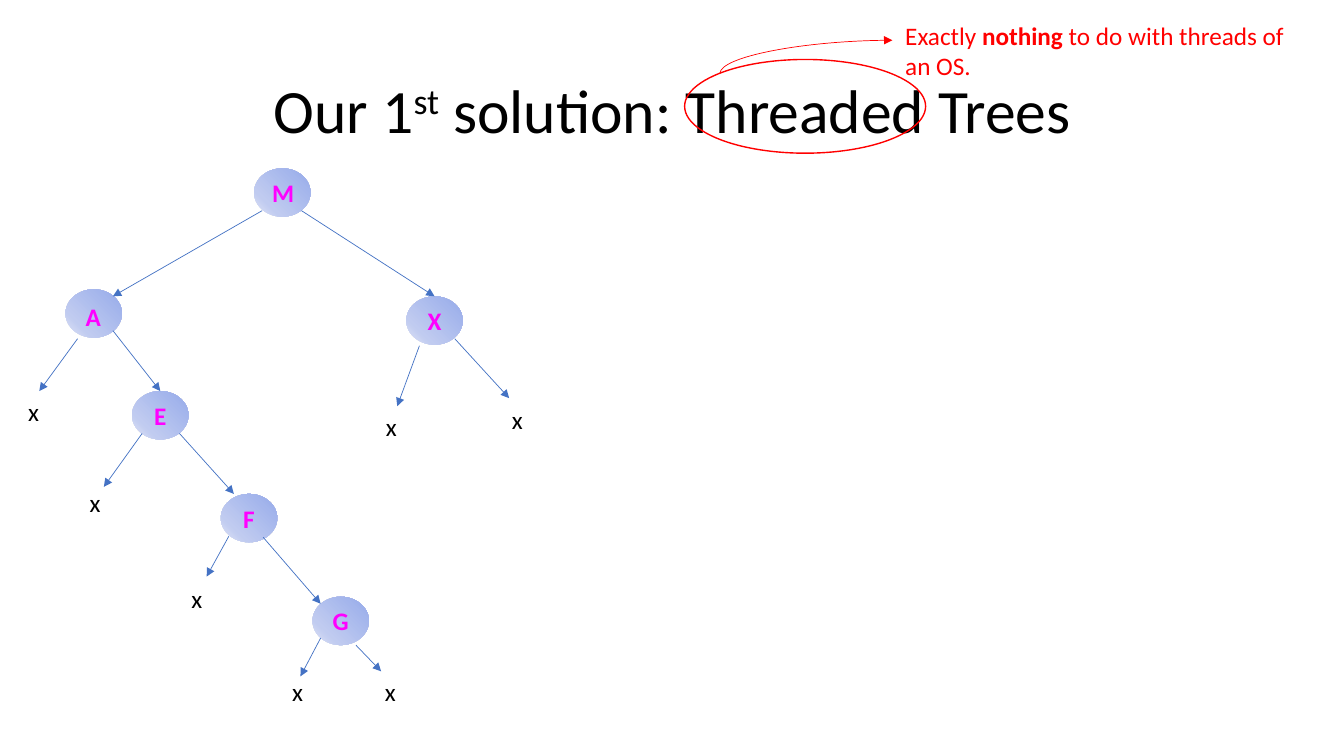
from lxml import etree
from pptx import Presentation
from pptx import util as u
from pptx.dml.color import RGBColor
from pptx.enum import shapes, text
from pptx.oxml import parse_xml
from pptx.oxml.ns import qn

COLORS = {"ink": "000000", "key": "FF00FF", "edge": "4472C4", "note": "FF0000"}
NODE_STOPS = [(0, "96ABEA"), (74, "C0CBF0"), (100, "E0E5F7")]
NODE_W, NODE_H = 0.56, 0.48

# Top left corners, relative to the tree's box
NODES = {"M": (2.34, 0), "A": (0.47, 1.2), "X": (3.85, 1.27),
         "E": (1.13, 2.21), "F": (2.01, 3.23), "G": (2.92, 4.25)}
NULLS = {"X left": (3.55, 2.36), "X right": (4.8, 2.29), "A left": (0, 2.21),
         "E left": (0.61, 3.12), "F left": (1.62, 4.07),
         "G left": (2.62, 4.99), "G right": (3.54, 4.99)}
# Parent, offset of the start in it, child, offset of the tip in it
EDGES = [
    ("M", (0.08, 0.42), "A", (0.47, 0.07)),
    ("M", (0.47, 0.42), "X", (0.28, 0)),
    ("A", (0.47, 0.41), "E", (0.28, 0)),
    ("E", (0.47, 0.42), "F", (0.13, 0)),
    ("F", (0.42, 0.43), "G", (0.08, 0.07)),
    ("X", (0.13, 0.49), "X left", (0.21, 0)),
    ("X", (0.48, 0.42), "X right", (0.07, -0.01)),
    ("A", (0.12, 0.49), "A left", (0.21, 0)),
    ("E", (0.1, 0.42), "E left", (0.24, 0.04)),
    ("F", (0.08, 0.42), "F left", (0.25, -0.02)),
    ("G", (0.08, 0.41), "G left", (0.18, 0.05)),
    ("G", (0.43, 0.48), "G right", (0.06, 0)),
]


def inches(*lengths):
    return [u.Inches(v) for v in lengths]


def add_run(p, words, color, size=18, **fmt):
    r = p.add_run()
    r.text = words
    for name, value in {"size": u.Pt(size), "name": "Calibri", **fmt}.items():
        setattr(r.font, name, value)
    r.font.color.rgb = RGBColor.from_string(COLORS[color])
    return r


def add_text(s, box, runs, wrap=True, align=text.PP_ALIGN.LEFT):
    tf = s.shapes.add_textbox(*inches(*box)).text_frame
    tf.word_wrap = wrap
    tf.auto_size = text.MSO_AUTO_SIZE.SHAPE_TO_FIT_TEXT
    p = tf.paragraphs[0]
    p.alignment = align
    for words, color, fmt in runs:
        add_run(p, words, color, **fmt)


def add_ellipse(s, box):
    sp = s.shapes.add_shape(shapes.MSO_SHAPE.OVAL, *inches(*box))
    sp.shadow.inherit = False
    return sp


def add_arrow(s, kind, start, end, color):
    line = s.shapes.add_connector(kind, *inches(*start, *end))
    line.line.color.rgb = RGBColor.from_string(COLORS[color])
    line.line.width = u.Pt(0.5)
    etree.SubElement(line.line._get_or_add_ln(), qn("a:tailEnd"), type="triangle")
    etree.SubElement(line._element.spPr, qn("a:effectLst"))
    return line


def add_node(s, key, x, y):
    sp = add_ellipse(s, (x, y, NODE_W, NODE_H))
    sp.line.fill.background()
    # Circular gradient that starts at the top right
    stops = "".join(f'<a:gs pos="{pos * 1000}"><a:srgbClr val="{c}"/></a:gs>'
                    for pos, c in NODE_STOPS)
    sp._element.spPr.find(qn("a:prstGeom")).addnext(parse_xml(
        '<a:gradFill xmlns:a="http://schemas.openxmlformats.org/drawingml/2006/main">'
        f'<a:gsLst>{stops}</a:gsLst><a:path path="circle">'
        '<a:fillToRect l="100000" b="100000"/></a:path></a:gradFill>'))
    if key == "A":  # this key sits in its own box, slightly lower
        add_text(s, (x + 0.1, y + 0.07, 0.35, 0.4), [(key, "key", {"bold": True})],
                 wrap=False, align=text.PP_ALIGN.CENTER)
        return
    tf = sp.text_frame
    tf.vertical_anchor = text.MSO_ANCHOR.MIDDLE
    tf.paragraphs[0].alignment = text.PP_ALIGN.CENTER
    add_run(tf.paragraphs[0], key, "key", bold=True)


def add_title(s, x, y, w, h):
    title = s.shapes.title
    title.left, title.top, title.width, title.height = inches(x, y, w, h)
    tf = title.text_frame
    tf.vertical_anchor = text.MSO_ANCHOR.MIDDLE
    p = tf.paragraphs[0]
    p.alignment, p.line_spacing = text.PP_ALIGN.CENTER, 0.9
    add_run(p, "Our 1", "ink", 44)
    add_run(p, "st", "ink", 44).font._element.set("baseline", "30000")
    add_run(p, " solution: Threaded Trees", "ink", 44)


def add_tree(s, x, y):
    places = {name: (x + dx, y + dy) for name, (dx, dy) in {**NODES, **NULLS}.items()}
    for key in NODES:
        add_node(s, key, *places[key])
    for name in NULLS:
        add_text(s, (*places[name], 0.43, 0.4), [("x", "ink", {})])
    for parent, start, child, tip in EDGES:
        ends = [(places[name][0] + dx, places[name][1] + dy)
                for name, (dx, dy) in ((parent, start), (child, tip))]
        add_arrow(s, shapes.MSO_CONNECTOR.STRAIGHT, *ends, "edge")


def add_note(s, x, y):
    # Ring around the word in the title
    ring = add_ellipse(s, (x, y + 0.44, 2.39, 0.93))
    ring.fill.background()
    ring.line.color.rgb = RGBColor.from_string(COLORS["note"])
    ring.line.width = u.Pt(1)
    # Quarter curve, turned so that it leaves upwards and arrives rightwards
    cx, cy, half_w, half_h = x + 1.205, y + 0.415, 0.165, 0.855
    curve = add_arrow(s, shapes.MSO_CONNECTOR.CURVE, (cx + half_w, cy + half_h),
                      (cx - half_w, cy - half_h), "note")
    spPr = curve._element.spPr
    spPr.find(qn("a:xfrm")).set("rot", "5400000")
    spPr.find(qn("a:prstGeom")).set("prst", "curvedConnector2")
    add_text(s, (x + 2.09, y, 4.16, 0.71),
             [("Exactly ", "note", {}), ("nothing", "note", {"bold": True}),
              (" to do with threads of an OS.", "note", {})])


def main():
    prs = Presentation()
    prs.slide_width, prs.slide_height = inches(13.33, 7.5)
    s = prs.slides.add_slide(prs.slide_layouts[5])
    add_title(s, 0.92, 0.4, 11.5, 1.45)
    add_tree(s, 0.18, 1.67)
    add_note(s, 6.79, 0.15)
    prs.save("out.pptx")


if __name__ == "__main__":
    main()
